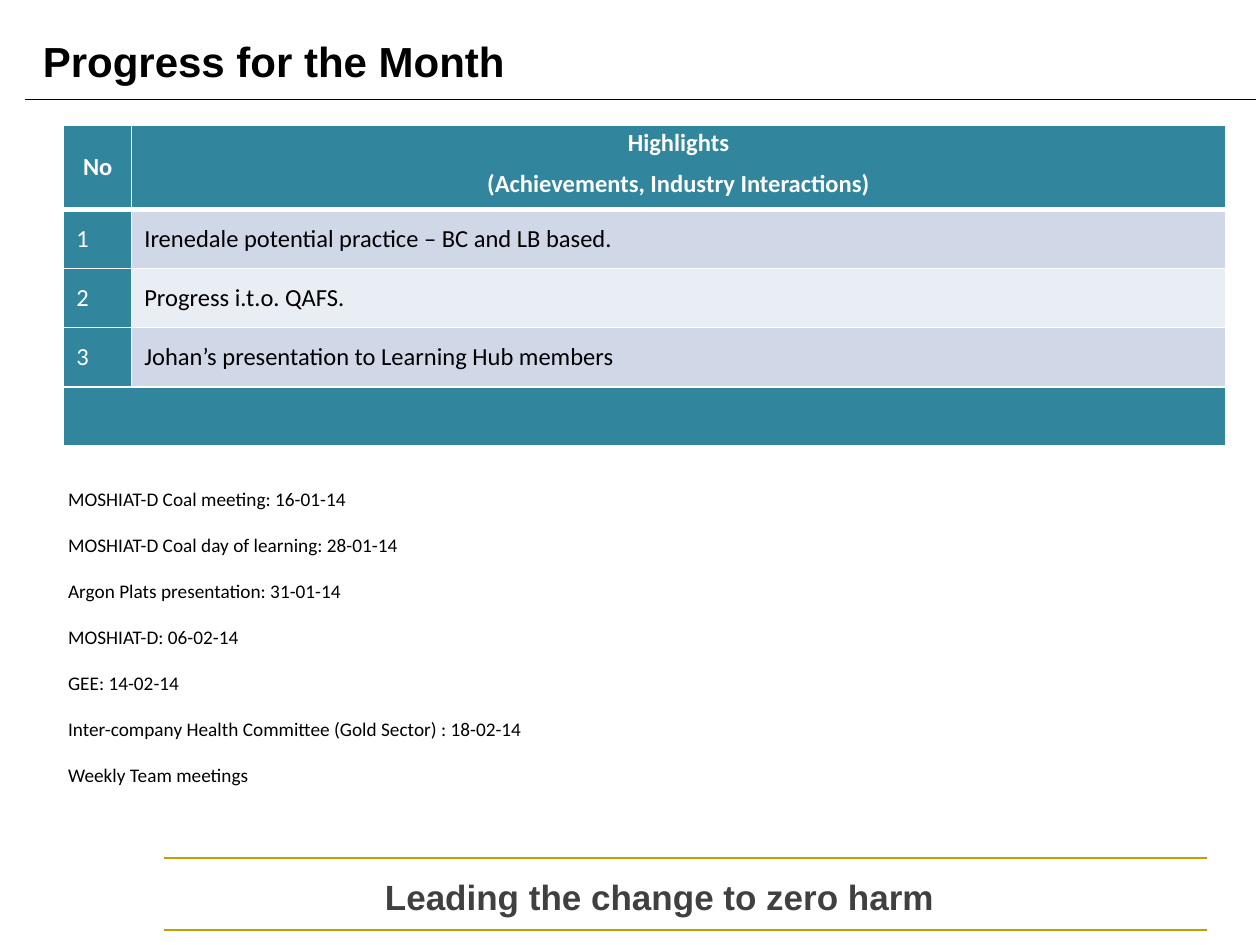
"""Build the monthly progress slide."""
from dataclasses import dataclass

from lxml import etree
from pptx import Presentation
from pptx.dml.color import RGBColor
from pptx.enum import shapes, text
from pptx.oxml import ns
from pptx.util import Pt


@dataclass(frozen=True)
class Theme:
    """Colours, fonts and type sizes of the slide."""
    ink: str = "000000"
    paper: str = "FFFFFF"
    teal: str = "31859C"
    bands: tuple = ("D0D8E8", "E9EDF4")
    gold: str = "C49F00"
    grey: str = "404040"
    heading: str = "Arial"
    copy: str = "Calibri"
    title_size: int = 24
    slogan_size: int = 20
    table_size: int = 14
    list_size: int = 11


THEME = Theme()
HIGHLIGHTS = (
    "Irenedale potential practice – BC and LB based.",
    "Progress i.t.o. QAFS.",
    "Johan’s presentation to Learning Hub members",
)
MEETINGS = (
    "MOSHIAT-D Coal meeting: 16-01-14",
    "MOSHIAT-D Coal day of learning: 28-01-14",
    "Argon Plats presentation: 31-01-14",
    "MOSHIAT-D: 06-02-14",
    "GEE: 14-02-14",
    "Inter-company Health Committee (Gold Sector) : 18-02-14",
    "Weekly Team meetings",
)


def add_span(para, words, size, color, face, bold=False):
    """Add one formatted run to a paragraph."""
    span = para.add_run()
    span.text = words
    span.font.size = Pt(size)
    span.font.name = face
    span.font.bold = bold
    span.font.color.rgb = RGBColor.from_string(color)


def place(shape, box):
    """Move a shape to a box given in points."""
    shape.left, shape.top, shape.width, shape.height = map(Pt, box)


def add_rule(page, left, right, top, color, weight):
    """Draw a horizontal line without a shadow."""
    rule = page.shapes.add_connector(
        shapes.MSO_CONNECTOR.STRAIGHT, Pt(left), Pt(top), Pt(right), Pt(top))
    rule.line.color.rgb = RGBColor.from_string(color)
    rule.line.width = Pt(weight)
    etree.SubElement(rule._element.spPr, ns.qn("a:effectLst"))


def add_title(page, box):
    """Fill the title placeholder and underline it."""
    title = page.shapes.title
    place(title, box)
    frame = title.text_frame
    frame.vertical_anchor = text.MSO_ANCHOR.MIDDLE
    frame.auto_size = text.MSO_AUTO_SIZE.NONE
    para = frame.paragraphs[0]
    para.alignment = text.PP_ALIGN.LEFT
    add_span(para, "Progress for the Month", THEME.title_size, THEME.ink,
             THEME.heading, bold=True)
    add_rule(page, 14.4, 717.8, 56.9, THEME.ink, 0.75)


def style_cell(cell, fill, bottom=1):
    """Give a cell white borders, a fill and centred height."""
    props = cell._tc.get_or_add_tcPr()
    for side, weight in (("L", 1), ("R", 1), ("T", 1), ("B", bottom)):
        border = etree.SubElement(props, ns.qn(f"a:ln{side}"), w=str(Pt(weight)))
        solid = etree.SubElement(border, ns.qn("a:solidFill"))
        etree.SubElement(solid, ns.qn("a:srgbClr"), val=THEME.paper)
    cell.fill.solid()
    cell.fill.fore_color.rgb = RGBColor.from_string(fill)
    cell.vertical_anchor = text.MSO_ANCHOR.MIDDLE


def add_heading(cell, lines):
    """Write centred bold header lines in a cell."""
    style_cell(cell, THEME.teal, bottom=3)
    frame = cell.text_frame
    for index, line in enumerate(lines):
        para = frame.add_paragraph() if index else frame.paragraphs[0]
        para.alignment = text.PP_ALIGN.CENTER
        if index:
            para.space_before = Pt(7)
        elif len(lines) > 1:
            para.line_spacing = 0.9
        add_span(para, line, THEME.table_size, THEME.paper, THEME.copy, bold=True)


def add_highlights(page, box):
    """Build the numbered table of highlights."""
    left, top, width, height = box
    count = len(HIGHLIGHTS) + 2
    grid = page.shapes.add_table(count, 2, *map(Pt, box)).table
    number_width, header_height = 38.9, 48.2
    grid.columns[0].width = Pt(number_width)
    grid.columns[1].width = Pt(width - number_width)
    for index, row in enumerate(grid.rows):
        row.height = Pt((height - header_height) / (count - 1) if index else header_height)

    add_heading(grid.cell(0, 0), ["No"])
    wide = grid.cell(0, 1)
    add_heading(wide, ["Highlights", "(Achievements, Industry Interactions)"])
    wide.vertical_anchor = text.MSO_ANCHOR.TOP
    wide.margin_left = wide.margin_right = wide.margin_top = wide.margin_bottom = Pt(2.9)

    for number, words in enumerate(HIGHLIGHTS, 1):
        band = THEME.bands[(number - 1) % 2]
        columns = ((str(number), THEME.teal, THEME.paper), (words, band, THEME.ink))
        for column, (content, fill, color) in enumerate(columns):
            cell = grid.cell(number, column)
            style_cell(cell, fill)
            add_span(cell.text_frame.paragraphs[0], content, THEME.table_size,
                     color, THEME.copy)

    closing = grid.cell(count - 1, 0)
    closing.merge(grid.cell(count - 1, 1))
    for column in range(2):
        style_cell(grid.cell(count - 1, column), THEME.teal)


def add_meetings(page, box):
    """List the meetings in the body placeholder without bullets."""
    body = page.placeholders[1]
    place(body, box)
    frame = body.text_frame
    frame.auto_size = text.MSO_AUTO_SIZE.NONE
    for index, meeting in enumerate(MEETINGS):
        para = frame.add_paragraph() if index else frame.paragraphs[0]
        props = para._p.get_or_add_pPr()
        props.set("marL", "0")
        props.set("indent", "0")
        etree.SubElement(props, ns.qn("a:buNone"))
        para.space_before = Pt(13 if index else 0)
        add_span(para, meeting, THEME.list_size, THEME.ink, THEME.copy)


def add_slogan(page, box):
    """Write the slogan between two gold rules."""
    for top in (490.3, 531.4):
        add_rule(page, 93.6, 689.8, top, THEME.gold, 1)
    slogan = page.shapes.add_textbox(*map(Pt, box))
    slogan.text_frame.word_wrap = True
    para = slogan.text_frame.paragraphs[0]
    para.alignment = text.PP_ALIGN.CENTER
    add_span(para, "Leading the change to zero harm", THEME.slogan_size,
             THEME.grey, THEME.heading, bold=True)


def main():
    """Assemble and save the deck."""
    deck = Presentation()
    deck.slide_width, deck.slide_height = Pt(720), Pt(540)
    page = deck.slides.add_slide(deck.slide_layouts[1])
    add_title(page, (17.3, 12.2, 708.5, 45.4))
    add_highlights(page, (36.4, 71.5, 663.8, 183.4))
    add_slogan(page, (118.1, 497, 517.7, 28.1))
    add_meetings(page, (31.7, 275, 430.6, 180.7))
    deck.save("out.pptx")


if __name__ == "__main__":
    main()
